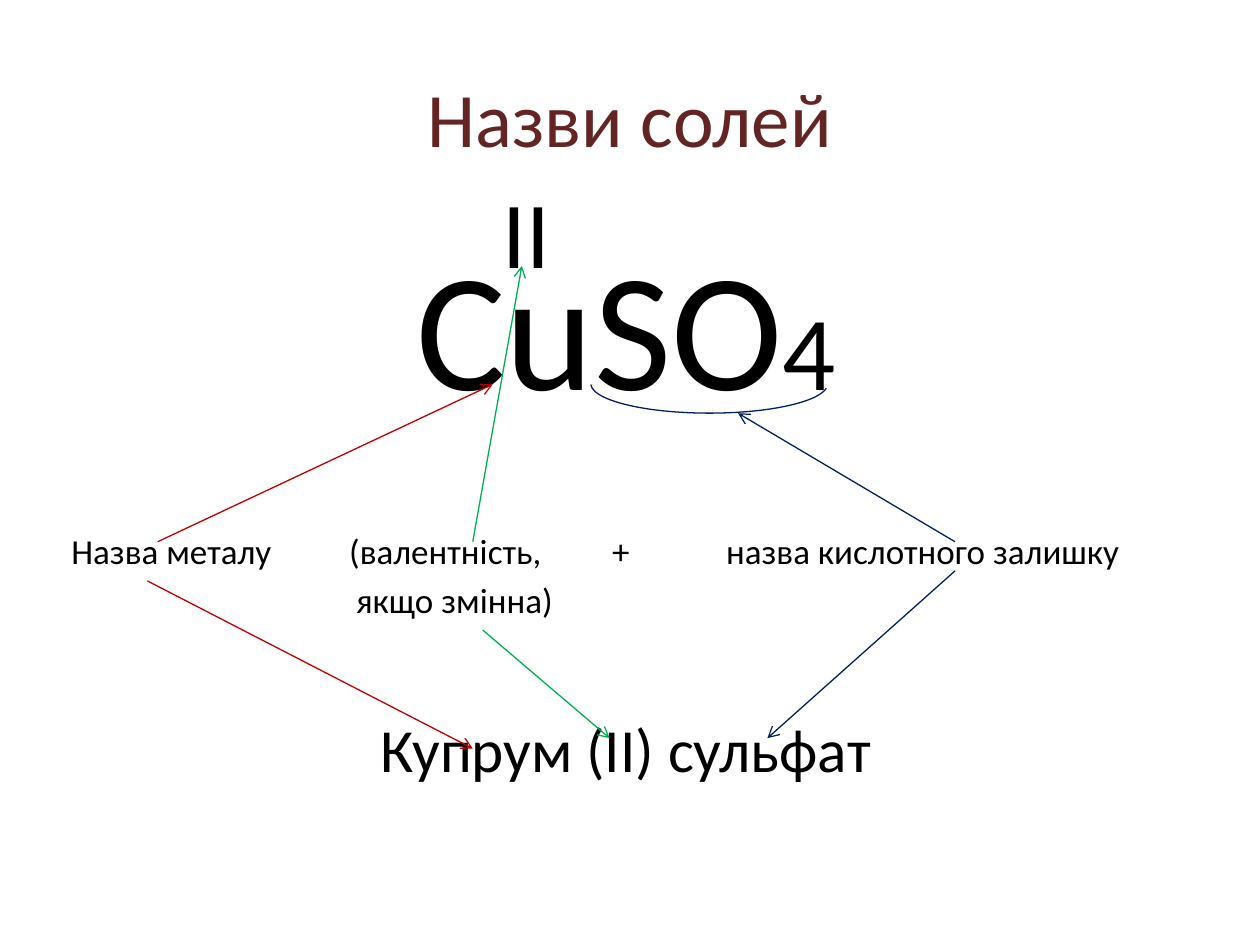
from lxml.etree import SubElement
from pptx import Presentation
from pptx.dml.color import RGBColor
from pptx.enum.shapes import MSO_CONNECTOR as Connector, MSO_SHAPE as Shape
from pptx.enum.text import MSO_ANCHOR as Anchor, PP_ALIGN as Align
from pptx.oxml.ns import qn
from pptx.util import Cm, Pt

COLORS = {
    "title": "632523",
    "text": "000000",
    "metal": "C00000",
    "valence": "00B050",
    "residue": "002060",
}


class SaltSlide:
    font_name = "Calibri"
    line_width = Pt(0.75)

    def __init__(self, deck):
        self.slide = deck.slides.add_slide(deck.slide_layouts[6])

    def text_box(self, left, top, width, height, anchor=Anchor.TOP, wrap=True):
        box = self.slide.shapes.add_textbox(Cm(left), Cm(top), Cm(width), Cm(height))
        frame = box.text_frame
        frame.word_wrap = wrap
        frame.vertical_anchor = anchor
        return frame

    def paragraph(self, frame, runs, color="text", align=Align.CENTER, before=0, tabs=()):
        first = frame.paragraphs[0]
        paragraph = frame.add_paragraph() if first.runs else first
        paragraph.alignment = align
        paragraph.space_before = Pt(before)
        if tabs:
            tab_list = SubElement(paragraph._p.get_or_add_pPr(), qn("a:tabLst"))
            for position in tabs:
                SubElement(tab_list, qn("a:tab"), pos=str(Cm(position)), algn="l")
        for words, size in runs:
            run = paragraph.add_run()
            run.text = words
            run.font.name = self.font_name
            run.font.size = Pt(size)
            run.font.color.rgb = RGBColor.from_string(COLORS[color])

    def style_line(self, line, color):
        line.color.rgb = RGBColor.from_string(COLORS[color])
        line.width = self.line_width

    def arrow(self, start, end, color):
        arrow = self.slide.shapes.add_connector(
            Connector.STRAIGHT, *(Cm(value) for value in start + end)
        )
        self.style_line(arrow.line, color)
        SubElement(arrow.line._get_or_add_ln(), qn("a:tailEnd"), type="arrow")
        SubElement(arrow._element.spPr, qn("a:effectLst"))

    def arc(self, left, top, width, height, adjustments, color):
        arc = self.slide.shapes.add_shape(
            Shape.ARC, Cm(left), Cm(top), Cm(width), Cm(height)
        )
        arc.shadow.inherit = False
        arc.fill.background()
        self.style_line(arc.line, color)
        for index, value in enumerate(adjustments):
            arc.adjustments[index] = value


def main():
    deck = Presentation()
    deck.slide_width, deck.slide_height = Cm(25.4), Cm(19.05)
    slide = SaltSlide(deck)

    title = slide.text_box(1.27, 0.76, 22.86, 3.18, Anchor.MIDDLE)
    slide.paragraph(title, [("Назви солей", 44)], "title")

    scheme = slide.text_box(1.19, 4.37, 22.86, 12.57)
    slide.paragraph(scheme, [("CuSO", 96), ("4", 60)])
    slide.paragraph(
        scheme,
        [("Назва металу\t(валентність,\t+\tназва кислотного залишку", 20)],
        align=Align.LEFT, before=60, tabs=(5.6, 10.9, 13.2),
    )
    slide.paragraph(
        scheme, [("\tякщо змінна)", 20)], align=Align.LEFT, before=4, tabs=(5.74,)
    )
    slide.paragraph(scheme, [("Купрум (ІІ) сульфат", 35)], before=52)

    valence = slide.text_box(9.73, 3.38, 1.78, 2.57, wrap=False)
    slide.paragraph(valence, [("II", 54)])

    for start, end, color in (
        ((3.18, 10.92), (9.93, 7.75), "metal"),
        ((2.97, 11.71), (9.53, 15.09), "metal"),
        ((9.53, 10.92), (10.52, 5.36), "valence"),
        ((9.73, 12.7), (12.29, 14.88), "valence"),
        ((19.25, 10.92), (14.88, 8.33), "residue"),
        ((19.25, 11.51), (15.47, 14.88), "residue"),
    ):
        slide.arrow(start, end, color)
    slide.arc(11.91, 7.14, 4.78, 1.19, (1.38, 107.73), "residue")

    deck.save("out.pptx")


if __name__ == "__main__":
    main()
